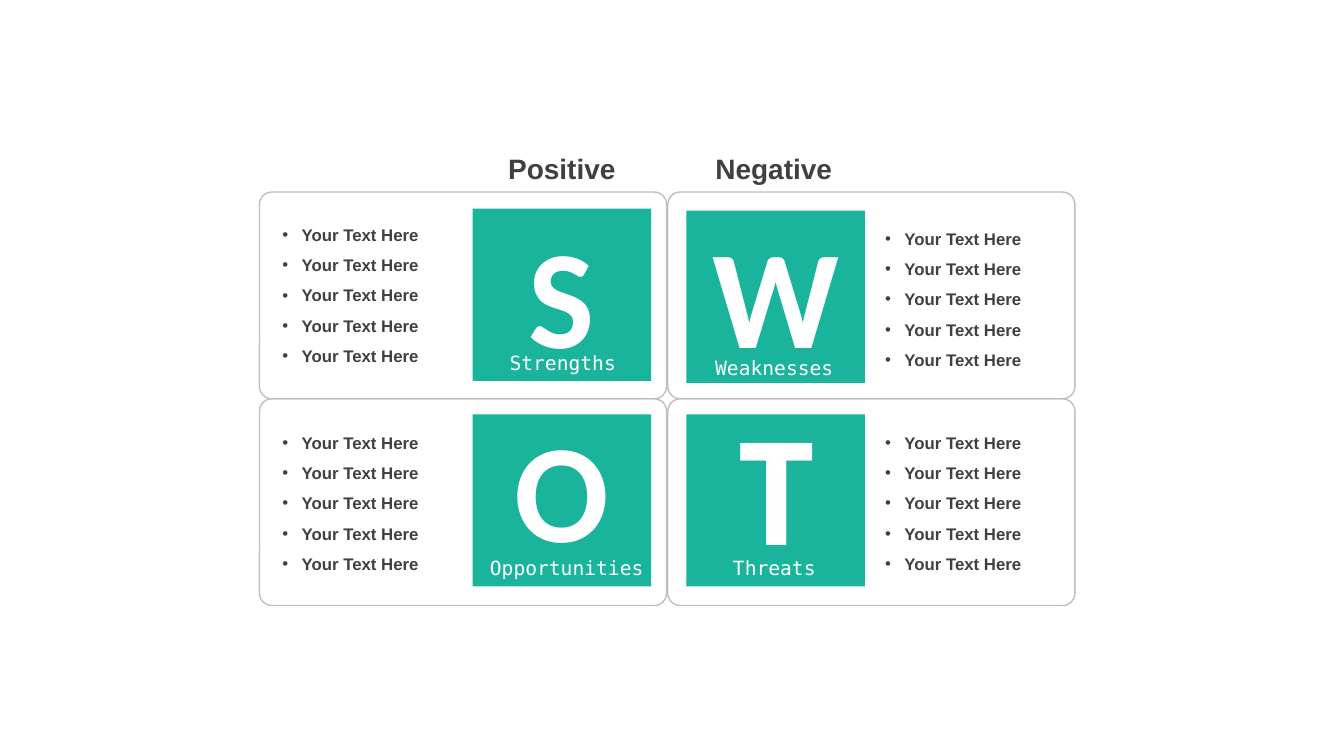
from dataclasses import dataclass

from lxml import etree
from pptx import Presentation
from pptx import util as u
from pptx.dml.color import RGBColor
from pptx.enum import shapes, text
from pptx.oxml.ns import qn

TEAL = "1AB49C"
WHITE = "FFFFFF"
DARK = "404040"
GREY = "BFBFBF"
SANS = "Arial"
MONO = "DejaVu Sans Mono"


@dataclass
class Box:
    left: float
    top: float
    width: float
    height: float

    def emu(self) -> list:
        return [u.Cm(v) for v in (self.left, self.top, self.width, self.height)]


@dataclass
class Style:
    size: int
    font: str
    color: str
    bold: bool = True


@dataclass
class Quadrant:
    letter: str
    label: str
    col: int
    row: int
    tile_top: float
    letter_center: tuple
    label_at: tuple
    list_at: tuple
    letter_font: str = "Calibri"


TILE_LEFTS = (11.91, 17.3)
HEADING = Style(20, SANS, DARK)
LABEL = Style(14, MONO, WHITE, False)
ITEM = Style(12, SANS, DARK)
ITEMS = ["Your Text Here"] * 5

HEADINGS = (("Positive", 11.91), ("Negative", 17.25))
QUADRANTS = (
    Quadrant("S", "Strengths", 0, 0, 5.26, (14.16, 7.37), (11.99, 8.66), (6.86, 5.28)),
    Quadrant("W", "Weaknesses", 1, 0, 5.31, (19.55, 7.37), (17.32, 8.79), (22.05, 5.38)),
    Quadrant("O", "Opportunities", 0, 1, 10.44, (14.16, 12.27), (12.09, 13.84), (6.86, 10.52)),
    Quadrant("T", "Threats", 1, 1, 10.44, (19.57, 12.34), (17.32, 13.84), (22.05, 10.52), MONO),
)


def rgb(value: str) -> RGBColor:
    return RGBColor.from_string(value)


def format_run(r, style: Style) -> None:
    r.font.size = u.Pt(style.size)
    r.font.name = style.font
    r.font.bold = style.bold
    r.font.color.rgb = rgb(style.color)


def add_tile(s, box: Box) -> None:
    sp = s.shapes.add_shape(shapes.MSO_SHAPE.RECTANGLE, *box.emu())
    sp.shadow.inherit = False
    sp.fill.solid()
    sp.fill.fore_color.rgb = rgb(TEAL)
    sp.line.fill.background()


def add_panel(s, box: Box) -> None:
    sp = s.shapes.add_shape(shapes.MSO_SHAPE.ROUNDED_RECTANGLE, *box.emu())
    sp.adjustments[0] = 0.06
    sp.shadow.inherit = False
    sp.fill.background()
    sp.line.color.rgb = rgb(GREY)
    sp.line.width = u.Pt(1)


def add_caption(s, caption: str, box: Box, style: Style) -> None:
    sp = s.shapes.add_textbox(*box.emu())
    tf = sp.text_frame
    tf.text = caption
    tf.word_wrap = False
    tf.vertical_anchor = text.MSO_ANCHOR.MIDDLE
    p = tf.paragraphs[0]
    p.alignment = text.PP_ALIGN.CENTER
    format_run(p.runs[0], style)


def fill_list(sp, items: list, box: Box) -> None:
    sp.left, sp.top, sp.width, sp.height = box.emu()
    tf = sp.text_frame
    tf.text = "\n".join(items)
    tf.word_wrap = True
    tf.auto_size = text.MSO_AUTO_SIZE.NONE
    tf.vertical_anchor = text.MSO_ANCHOR.TOP
    for p in tf.paragraphs:
        p.alignment = text.PP_ALIGN.JUSTIFY
        p.line_spacing = 1.5
        p.space_before = u.Pt(0)
        format_run(p.runs[0], ITEM)
        pPr = p._p.get_or_add_pPr()
        pPr.set("marL", str(u.Cm(0.49)))
        pPr.set("indent", str(-u.Cm(0.49)))
        etree.SubElement(pPr, qn("a:buFont"), typeface=SANS)
        etree.SubElement(pPr, qn("a:buChar"), char="•")


def main() -> None:
    prs = Presentation()
    prs.slide_width, prs.slide_height = u.Cm(33.87), u.Cm(19.05)
    s = prs.slides.add_slide(prs.slide_layouts.get_by_name("Comparison"))
    title = s.shapes.title._element
    title.getparent().remove(title)

    for heading, left in HEADINGS:
        add_caption(s, heading, Box(left, 3.76, 4.5, 0.94), HEADING)

    for q, body in zip(QUADRANTS, list(s.placeholders)):
        add_panel(s, Box(6.54 + 10.29 * q.col, 4.84 + 5.21 * q.row, 10.26, 5.21))
        add_tile(s, Box(TILE_LEFTS[q.col], q.tile_top, 4.5, 4.34))
        x, y = q.letter_center
        add_caption(s, q.letter, Box(x - 2.17, y - 1.32, 4.34, 2.64),
                    Style(100, q.letter_font, WHITE))
        add_caption(s, q.label, Box(*q.label_at, 4.39, 0.94), LABEL)
        fill_list(body, ITEMS, Box(*q.list_at, 4.72, 4.24))

    prs.save("out.pptx")


if __name__ == "__main__":
    main()
